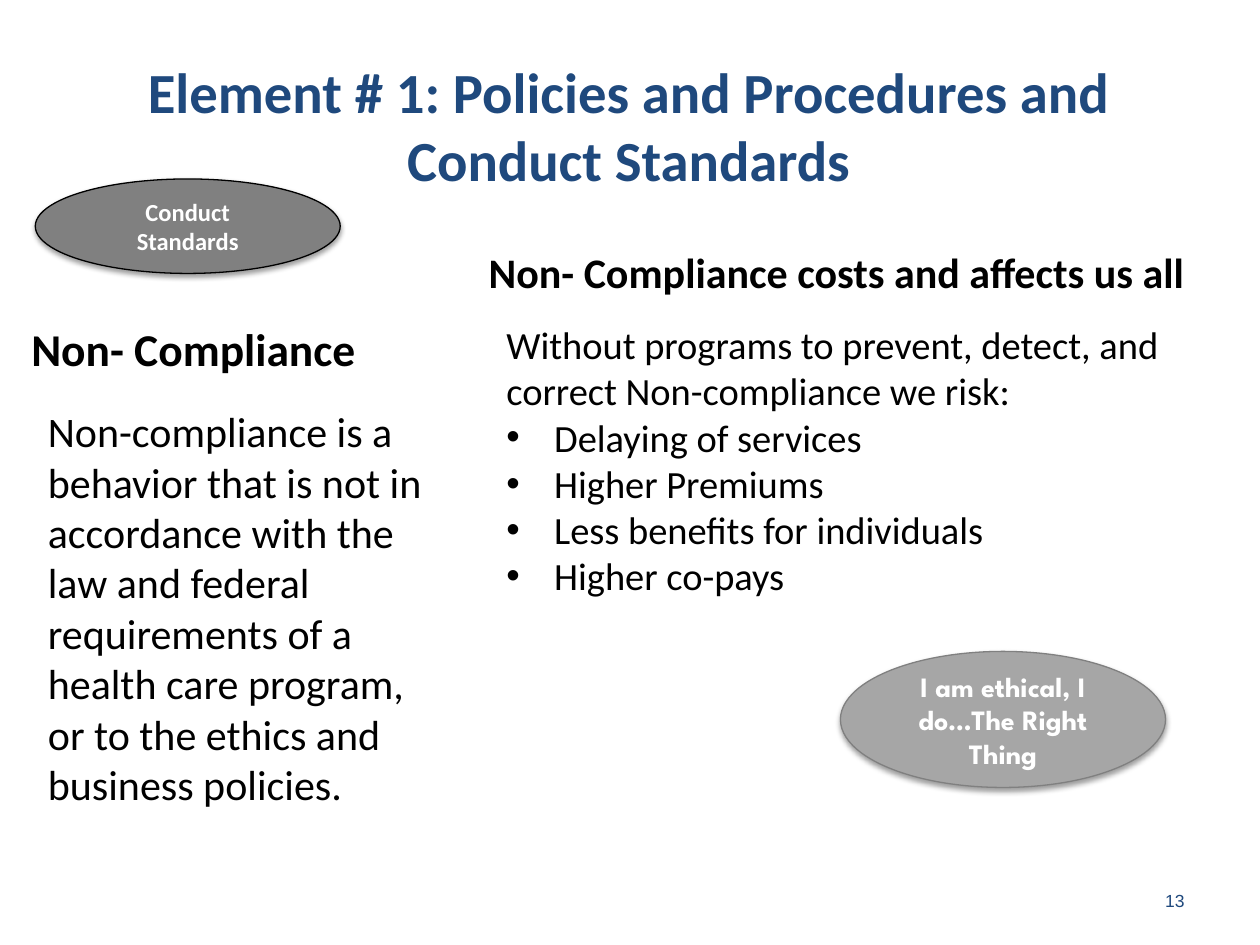
from lxml import etree
from pptx import Presentation
from pptx.dml.color import RGBColor
from pptx.enum.shapes import MSO_SHAPE
from pptx.enum.text import MSO_ANCHOR, MSO_AUTO_SIZE, PP_ALIGN
from pptx.oxml import parse_xml
from pptx.oxml.ns import nsdecls, qn
from pptx.util import Inches, Pt

LEFT, CENTER, RIGHT = PP_ALIGN.LEFT, PP_ALIGN.CENTER, PP_ALIGN.RIGHT
TOP, MIDDLE = MSO_ANCHOR.TOP, MSO_ANCHOR.MIDDLE
NO_FIT, GROW = MSO_AUTO_SIZE.NONE, MSO_AUTO_SIZE.SHAPE_TO_FIT_TEXT
OVAL = MSO_SHAPE.OVAL

NAVY = RGBColor(0x1F, 0x49, 0x7D)
BLACK = RGBColor(0, 0, 0)
WHITE = RGBColor(0xFF, 0xFF, 0xFF)
GRAY = RGBColor(0x80, 0x80, 0x80)
LIGHT_GRAY = RGBColor(0xA6, 0xA6, 0xA6)

SHADOW = (
    f'<a:effectLst {nsdecls("a")}><a:outerShdw blurRad="{Pt(3.1)}" '
    f'dist="{Pt(1.6)}" dir="5400000" rotWithShape="0">'
    '<a:srgbClr val="000000"><a:alpha val="38000"/></a:srgbClr>'
    '</a:outerShdw></a:effectLst>'
)


def place(s, box):
    s.left, s.top, s.width, s.height = map(Inches, box)


def set_bullet(p, char=None, indent=0):
    pPr = p._p.get_or_add_pPr()
    pPr.set("marL", str(Inches(indent)))
    pPr.set("indent", str(-Inches(indent)))
    if char:
        etree.SubElement(pPr, qn("a:buFont")).set("typeface", "Arial")
        etree.SubElement(pPr, qn("a:buChar")).set("char", char)
    else:
        etree.SubElement(pPr, qn("a:buNone"))


def write(s, lines, size, color=BLACK, bold=False, font="Calibri",
          align=LEFT, anchor=TOP, wrap=True, fit=NO_FIT, bullets_from=None):
    """Fill a shape with paragraphs; those from bullets_from on get bullets."""
    tf = s.text_frame
    tf.word_wrap, tf.auto_size, tf.vertical_anchor = wrap, fit, anchor
    style = {"name": font, "size": Pt(size), "bold": bold}
    for i, line in enumerate(lines):
        p = tf.paragraphs[0] if i == 0 else tf.add_paragraph()
        p.alignment, p.space_before = align, Pt(0)
        if bullets_from is not None and i >= bullets_from:
            set_bullet(p, "•", 0.38)
        else:
            set_bullet(p)
        r = p.add_run()
        r.text = line
        for name, value in style.items():
            setattr(r.font, name, value)
        r.font.color.rgb = color


def add_text(slide, box, lines, size, **format_values):
    s = slide.shapes.add_textbox(*map(Inches, box))
    write(s, lines, size, **format_values)


def add_oval(slide, box, text, size, fill, line, font="Calibri"):
    s = slide.shapes.add_shape(OVAL, *map(Inches, box))
    s.fill.solid()
    s.fill.fore_color.rgb = fill
    s.line.color.rgb = line
    s.line.width = Pt(0.75)
    s._element.spPr.append(parse_xml(SHADOW))
    write(s, [text], size, color=WHITE, bold=True, font=font,
          align=CENTER, anchor=MIDDLE)


def main():
    prs = Presentation()
    prs.slide_width, prs.slide_height = Inches(10), Inches(7.5)
    slide = prs.slides.add_slide(prs.slide_layouts[1])

    # Title
    title = slide.shapes.title
    place(title, (0.49, 0.45, 9, 1.08))
    write(title, ["Element # 1: Policies and Procedures and Conduct Standards"],
          32.4, color=NAVY, bold=True, align=CENTER, anchor=MIDDLE)

    # Left column: definition
    add_oval(slide, (0.28, 1.42, 2.42, 0.75), "Conduct Standards", 14,
             GRAY, BLACK)
    add_text(slide, (0.15, 2.5, 2.8, 0.54), ["Non- Compliance"], 26,
             bold=True, wrap=False, fit=GROW)
    body = slide.placeholders[1]
    place(body, (0.28, 3.17, 3.3, 3.78))
    write(body, ["Non-compliance is a behavior that is not in accordance with "
                 "the law and federal requirements of a health care program, "
                 "or to the ethics and business policies."], 24)

    # Right column: risks
    add_text(slide, (3.78, 1.91, 5.92, 0.5),
             ["Non- Compliance costs and affects us all"], 24,
             bold=True, wrap=False, fit=GROW)
    add_text(slide, (3.92, 2.5, 5.78, 2.32),
             ["Without programs to prevent, detect, and correct "
              "Non-compliance we risk:",
              "Delaying of services", "Higher Premiums",
              "Less benefits for individuals", "Higher co-pays"], 22,
             fit=GROW, bullets_from=1)
    add_oval(slide, (6.67, 5.17, 2.58, 1.08),
             "I am ethical, I do…The Right Thing", 16, LIGHT_GRAY, GRAY,
             font="League Spartan")

    # Slide number
    add_text(slide, (7.17, 6.95, 2.33, 0.4), ["13"], 10, color=NAVY,
             font="Arial", align=RIGHT, anchor=MIDDLE)

    prs.save("out.pptx")


if __name__ == "__main__":
    main()
